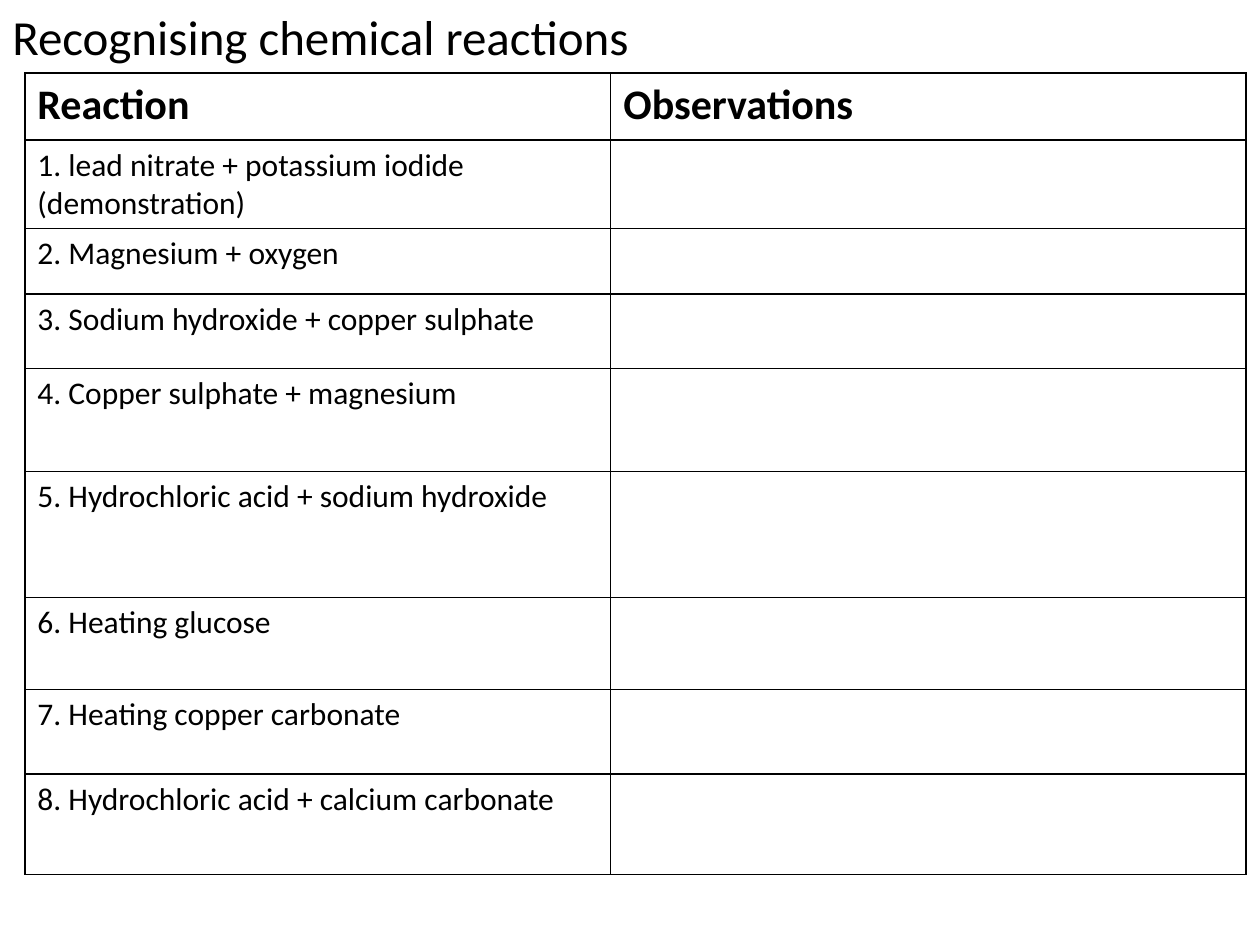
from typing import NamedTuple

from lxml import etree
from pptx import Presentation
from pptx.dml.color import RGBColor
from pptx.enum import text
from pptx.oxml import ns
from pptx.util import Pt

BLACK = RGBColor(0x00, 0x00, 0x00)
WHITE = RGBColor(0xFF, 0xFF, 0xFF)
FONT = "Calibri"
COLUMN_WIDTHS = (334.8, 362.9)
BORDER_WIDTH = 1


class Row(NamedTuple):
    height: float
    reaction: tuple[str, ...]
    observations: tuple[str, ...] = ()
    size: int = 18
    bold: bool = False


ROWS = (
    Row(38.2, ("Reaction",), ("Observations",), size=24, bold=True),
    Row(50.6, ("1. lead nitrate + potassium iodide", "(demonstration)")),
    Row(37.4, ("2. Magnesium + oxygen",)),
    Row(42.5, ("3. Sodium hydroxide + copper sulphate",)),
    Row(59, ("4. Copper sulphate + magnesium",)),
    Row(72, ("5. Hydrochloric acid + sodium hydroxide",)),
    Row(52.6, ("6. Heating glucose",)),
    Row(48.2, ("7. Heating copper carbonate",)),
    Row(57.6, ("8. Hydrochloric acid + calcium carbonate",)),
)


def write_lines(frame, lines: tuple[str, ...], size: int, bold: bool = False) -> None:
    """Write each line as a paragraph of its own."""
    for index, line in enumerate(lines):
        paragraph = frame.add_paragraph() if index else frame.paragraphs[0]
        run = paragraph.add_run()
        run.text = line
        run.font.name = FONT
        run.font.size = Pt(size)
        run.font.bold = bold
        run.font.color.rgb = BLACK


def add_borders(cell) -> None:
    properties = cell._tc.get_or_add_tcPr()
    for index, side in enumerate(("lnL", "lnR", "lnT", "lnB")):
        line = etree.Element(ns.qn(f"a:{side}"), w=str(Pt(BORDER_WIDTH)))
        fill = etree.SubElement(line, ns.qn("a:solidFill"))
        etree.SubElement(fill, ns.qn("a:srgbClr"), val=str(BLACK))
        properties.insert(index, line)


def add_title(slide) -> None:
    box = slide.shapes.add_textbox(Pt(0), Pt(0), Pt(720), Pt(41))
    box.text_frame.word_wrap = True
    box.text_frame.auto_size = text.MSO_AUTO_SIZE.SHAPE_TO_FIT_TEXT
    write_lines(box.text_frame, ("Recognising chemical reactions",), 28)


def add_reaction_table(slide) -> None:
    height = sum(row.height for row in ROWS)
    table = slide.shapes.add_table(
        len(ROWS), len(COLUMN_WIDTHS), Pt(14.2), Pt(41.8), Pt(sum(COLUMN_WIDTHS)), Pt(height)
    ).table
    table.first_row = False
    table.horz_banding = False
    for column, width in zip(table.columns, COLUMN_WIDTHS):
        column.width = Pt(width)
    for table_row, row in zip(table.rows, ROWS):
        table_row.height = Pt(row.height)
        for cell, lines in zip(table_row.cells, (row.reaction, row.observations)):
            cell.fill.solid()
            cell.fill.fore_color.rgb = WHITE
            add_borders(cell)
            write_lines(cell.text_frame, lines, row.size, row.bold)


def main() -> None:
    presentation = Presentation()
    presentation.slide_width = Pt(720)
    presentation.slide_height = Pt(540)
    slide = presentation.slides.add_slide(presentation.slide_layouts[6])
    add_title(slide)
    add_reaction_table(slide)
    presentation.save("out.pptx")


if __name__ == "__main__":
    main()
